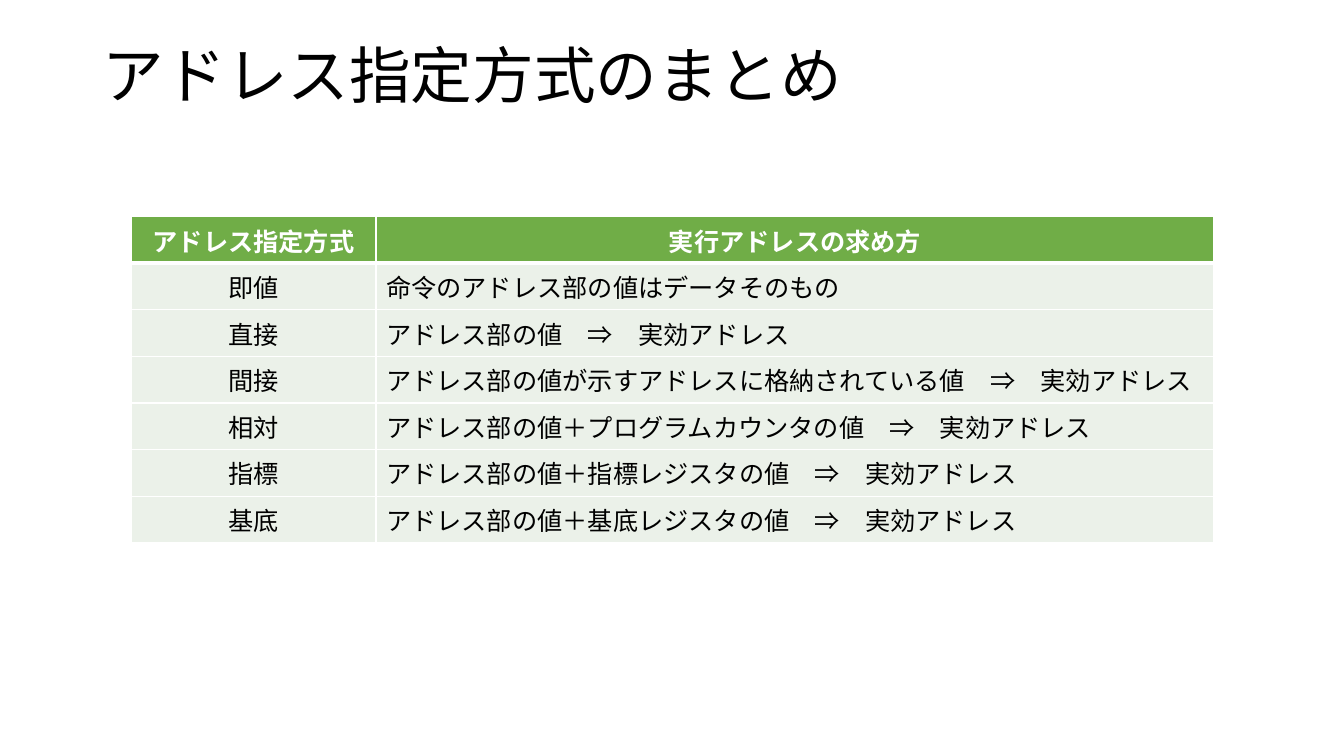
from lxml.etree import SubElement
from pptx import Presentation
from pptx.dml.color import RGBColor
from pptx.enum.text import MSO_ANCHOR, PP_ALIGN
from pptx.oxml.ns import qn
from pptx.util import Inches, Pt

WHITE = RGBColor(0xFF, 0xFF, 0xFF)
BLACK = RGBColor(0x00, 0x00, 0x00)
GREEN = RGBColor(0x70, 0xAD, 0x47)
PALE_GREEN = RGBColor(0xEB, 0xF1, 0xE9)

TITLE = "アドレス指定方式のまとめ"
ADDRESSING_MODES = [
    ("アドレス指定方式", "実行アドレスの求め方"),
    ("即値", "命令のアドレス部の値はデータそのもの"),
    ("直接", "アドレス部の値　⇒　実効アドレス"),
    ("間接", "アドレス部の値が示すアドレスに格納されている値　⇒　実効アドレス"),
    ("相対", "アドレス部の値＋プログラムカウンタの値　⇒　実効アドレス"),
    ("指標", "アドレス部の値＋指標レジスタの値　⇒　実効アドレス"),
    ("基底", "アドレス部の値＋基底レジスタの値　⇒　実効アドレス"),
]
COLUMN_WIDTHS = [2.43, 8.31]
ROW_HEIGHT = 0.45


class SlideBuilder:
    font_name = "Noto Sans CJK JP"
    table_size = 18
    title_size = 44

    def __init__(self, slide):
        self.slide = slide

    def format_paragraph(self, paragraph, size, color, bold=False, align=PP_ALIGN.LEFT):
        paragraph.alignment = align
        font = paragraph.font
        font.size, font.bold, font.name = Pt(size), bold, self.font_name
        font.color.rgb = color
        # Japanese text takes its typeface from the East Asian font
        properties = paragraph._p.pPr.find(qn("a:defRPr"))
        SubElement(properties, qn("a:ea"), typeface=self.font_name)

    def add_title(self, text, left, top, width, height):
        title = self.slide.shapes.title
        title.left, title.top = Inches(left), Inches(top)
        title.width, title.height = Inches(width), Inches(height)
        frame = title.text_frame
        frame.text = text
        frame.vertical_anchor = MSO_ANCHOR.TOP
        paragraph = frame.paragraphs[0]
        paragraph.line_spacing = 0.9
        self.format_paragraph(paragraph, self.title_size, BLACK)

    def set_borders(self, cell, top, bottom):
        properties = cell._tc.get_or_add_tcPr()
        for side, width in (("L", 1), ("R", 1), ("T", top), ("B", bottom)):
            line = SubElement(properties, qn(f"a:ln{side}"), w=str(Pt(width)))
            fill = SubElement(line, qn("a:solidFill"))
            SubElement(fill, qn("a:srgbClr"), val=str(WHITE))

    def add_table(self, rows, left, top, column_widths, row_height):
        table = self.slide.shapes.add_table(
            len(rows), len(column_widths), Inches(left), Inches(top),
            Inches(sum(column_widths)), Inches(row_height * len(rows))).table
        for column, width in zip(table.columns, column_widths):
            column.width = Inches(width)
        for row_index, texts in enumerate(rows):
            table.rows[row_index].height = Inches(row_height)
            header = row_index == 0
            for column_index, text in enumerate(texts):
                cell = table.cell(row_index, column_index)
                cell.text = text
                centered = header or column_index == 0
                self.format_paragraph(
                    cell.text_frame.paragraphs[0], self.table_size,
                    WHITE if header else BLACK, bold=header,
                    align=PP_ALIGN.CENTER if centered else PP_ALIGN.LEFT)
                # A thicker rule separates the header from the body
                self.set_borders(cell, top=3 if row_index == 1 else 1,
                                 bottom=3 if header else 1)
                cell.fill.solid()
                cell.fill.fore_color.rgb = GREEN if header else PALE_GREEN


def main():
    presentation = Presentation()
    presentation.slide_width = Inches(13.33)
    presentation.slide_height = Inches(7.5)
    title_only_layout = presentation.slide_layouts[5]
    builder = SlideBuilder(presentation.slides.add_slide(title_only_layout))

    # Title
    builder.add_title(TITLE, 0.92, 0.4, 11.5, 1.12)

    # Summary table
    builder.add_table(ADDRESSING_MODES, 1.3, 2.15, COLUMN_WIDTHS, ROW_HEIGHT)

    presentation.save("out.pptx")


if __name__ == "__main__":
    main()
